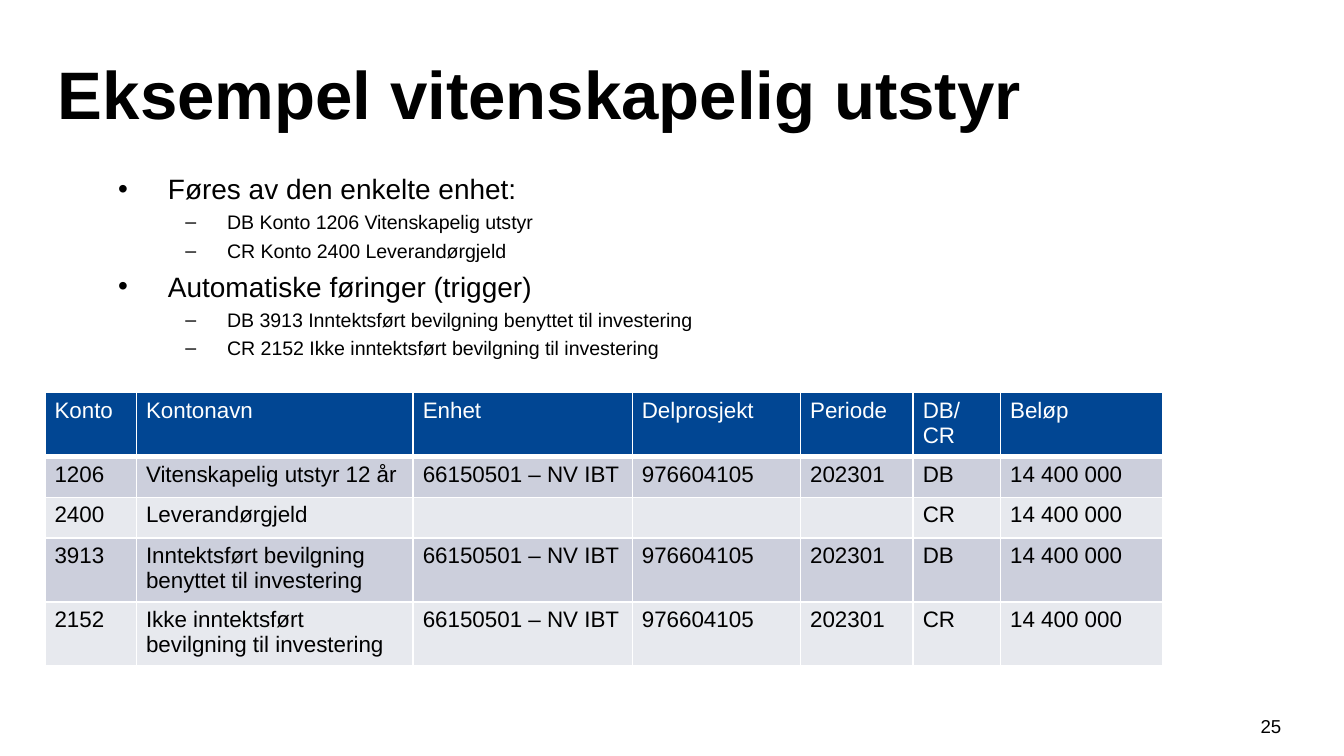
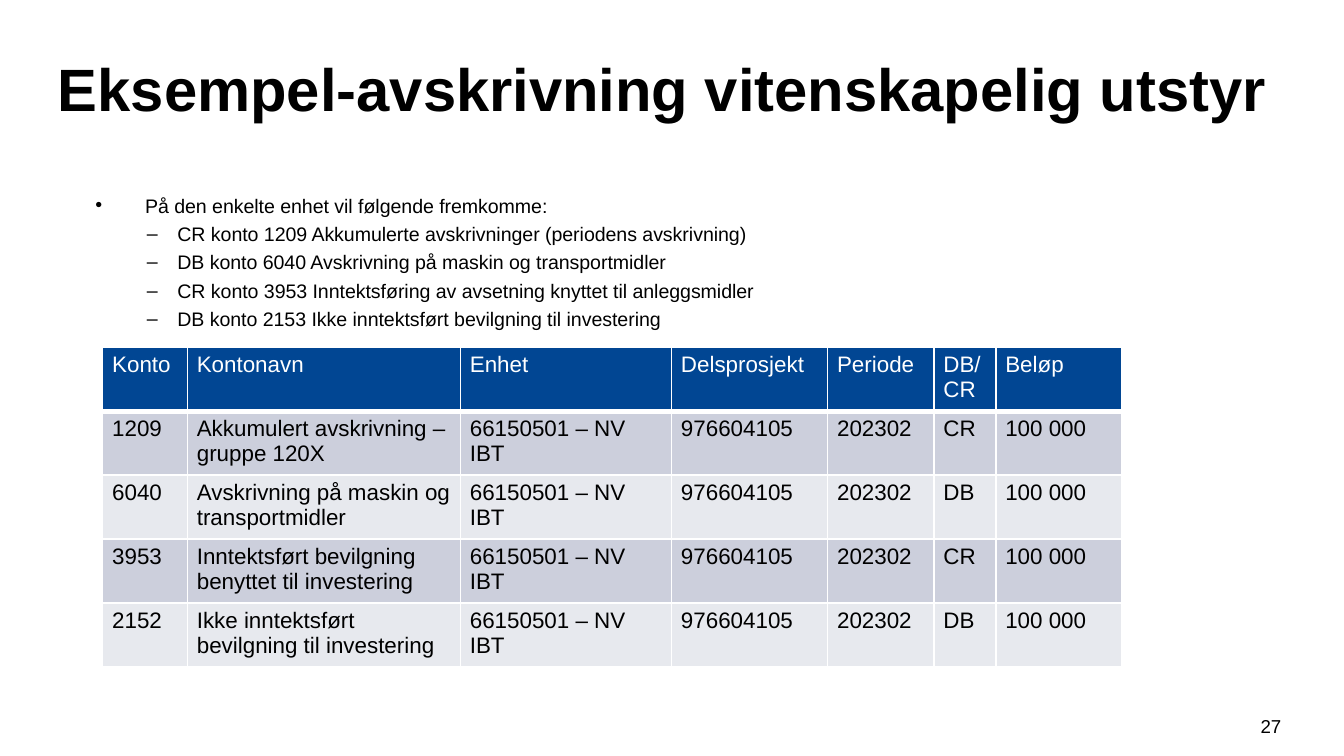
from dataclasses import dataclass

from lxml.etree import SubElement
from pptx import Presentation
from pptx.dml.color import RGBColor
from pptx.enum.text import MSO_ANCHOR, MSO_AUTO_SIZE, PP_ALIGN
from pptx.oxml.ns import qn
from pptx.util import Cm, Pt


@dataclass(frozen=True)
class Theme:
    font: str = "Arial"
    text: RGBColor = RGBColor(0x00, 0x00, 0x00)
    white: RGBColor = RGBColor(0xFF, 0xFF, 0xFF)
    header: RGBColor = RGBColor(0x01, 0x46, 0x93)
    bands: tuple = (RGBColor(0xCC, 0xCF, 0xDC), RGBColor(0xE7, 0xE9, 0xEE))
    heading_size: float = 15
    detail_size: float = 10.5
    table_size: float = 12
    number_size: float = 10
    spacing: float = 0.25  # space before a list item, per point of type
    border: float = 1
    header_border: float = 3


THEME = Theme()
TALL_ROW, LOW_ROW = 1.21, 0.77
UNIT = "66150501 – NV IBT"
PROJECT = "976604105"


def place(shape, left, top, width, height):
    shape.left, shape.top = Cm(left), Cm(top)
    shape.width, shape.height = Cm(width), Cm(height)


def add_run(paragraph, text, size, color=THEME.text, bold=False):
    run = paragraph.add_run()
    run.text = text
    run.font.name = THEME.font
    run.font.size = Pt(size)
    run.font.bold = bold
    run.font.color.rgb = color


def add_title(slide, text, size, height):
    title = slide.shapes.title
    place(title, 0.84, 0.84, 23.39, height)
    frame = title.text_frame
    frame.auto_size = MSO_AUTO_SIZE.SHAPE_TO_FIT_TEXT
    frame.vertical_anchor = MSO_ANCHOR.BOTTOM
    paragraph = frame.paragraphs[0]
    paragraph.alignment = PP_ALIGN.LEFT
    add_run(paragraph, text, size, bold=True)


def set_bullet(paragraph, character, margin, hanging):
    properties = paragraph._p.get_or_add_pPr()
    properties.set("marL", str(Cm(margin)))
    properties.set("indent", str(-Cm(hanging)))
    SubElement(properties, qn("a:buChar")).set("char", character)


def add_list(slide, left, top, items, heading_size, detail_indent):
    """Fill the body placeholder; items are (level, text) pairs."""
    body = slide.placeholders[1]
    place(body, left, top, 21.89, 9.07)
    frame = body.text_frame
    frame.auto_size = MSO_AUTO_SIZE.NONE
    styles = (
        ("•", (0.94, 0.94), heading_size),
        ("–", detail_indent, THEME.detail_size),
    )
    for index, (level, text) in enumerate(items):
        paragraph = frame.add_paragraph() if index else frame.paragraphs[0]
        character, indent, size = styles[level]
        paragraph.level = level
        set_bullet(paragraph, character, *indent)
        paragraph.space_before = Pt(round(size * THEME.spacing, 1) if index else 0)
        add_run(paragraph, text, size)


def set_borders(cell, bottom):
    properties = cell._tc.get_or_add_tcPr()
    widths = {"L": THEME.border, "R": THEME.border, "T": THEME.border, "B": bottom}
    for side, width in widths.items():
        line = SubElement(properties, qn(f"a:ln{side}"), w=str(Pt(width)))
        fill = SubElement(line, qn("a:solidFill"))
        SubElement(fill, qn("a:srgbClr"), val=str(THEME.white))


def fill_cell(cell, text, row_index):
    is_header = row_index == 0
    cell.margin_left = cell.margin_right = Cm(0.18)
    cell.margin_top = cell.margin_bottom = Cm(0.1)
    set_borders(cell, THEME.header_border if is_header else THEME.border)
    cell.fill.solid()
    cell.fill.fore_color.rgb = THEME.header if is_header else THEME.bands[(row_index - 1) % 2]
    paragraph = cell.text_frame.paragraphs[0]
    if text:
        add_run(paragraph, text, THEME.table_size, THEME.white if is_header else THEME.text)
    else:
        end = SubElement(paragraph._p, qn("a:endParaRPr"))
        end.set("sz", str(THEME.table_size * 100))


def add_posting_table(slide, left, top, widths, heights, rows):
    frame = slide.shapes.add_table(
        len(rows), len(widths), Cm(left), Cm(top), Cm(sum(widths)), Cm(sum(heights))
    )
    table = frame.table
    for column, width in zip(table.columns, widths):
        column.width = Cm(width)
    for row_index, (row, height) in enumerate(zip(rows, heights)):
        table.rows[row_index].height = Cm(height)
        for column_index, text in enumerate(row):
            fill_cell(table.cell(row_index, column_index), text, row_index)


def add_slide_number(slide, number):
    box = slide.shapes.add_textbox(Cm(23.55), Cm(13.39), Cm(0.94), Cm(0.76))
    frame = box.text_frame
    frame.word_wrap = True
    frame.margin_left = frame.margin_right = 0
    paragraph = frame.paragraphs[0]
    paragraph.alignment = PP_ALIGN.CENTER
    add_run(paragraph, str(number), THEME.number_size)


def header_row(project_label):
    return ("Konto", "Kontonavn", "Enhet", project_label, "Periode", "DB/CR", "Beløp")


def posting(account, name, side, period, amount):
    return (account, name, UNIT, PROJECT, period, side, amount)


def build_purchase_slide(slide):
    add_title(slide, "Eksempel vitenskapelig utstyr", 36, 1.8)
    items = (
        (0, "Føres av den enkelte enhet:"),
        (1, "DB Konto 1206 Vitenskapelig utstyr"),
        (1, "CR Konto 2400 Leverandørgjeld"),
        (0, "Automatiske føringer (trigger)"),
        (1, "DB 3913 Inntektsført bevilgning benyttet til investering"),
        (1, "CR 2152 Ikke inntektsført bevilgning til investering"),
    )
    add_list(slide, 1.98, 3.12, items, THEME.heading_size, (2.06, 0.79))
    period, amount = "202301", "14 400 000"
    rows = (
        header_row("Delprosjekt"),
        posting("1206", "Vitenskapelig utstyr 12 år", "DB", period, amount),
        ("2400", "Leverandørgjeld", "", "", "", "CR", amount),
        posting("3913", "Inntektsført bevilgning benyttet til investering", "DB", period, amount),
        posting("2152", "Ikke inntektsført bevilgning til investering", "CR", period, amount),
    )
    widths = (1.73, 5.23, 4.14, 3.18, 2.13, 1.65, 3.07)
    heights = (TALL_ROW, LOW_ROW, LOW_ROW, TALL_ROW, TALL_ROW)
    add_posting_table(slide, 0.85, 7.42, widths, heights, rows)
    add_slide_number(slide, 25)


def build_depreciation_slide(slide):
    add_title(slide, "Eksempel-avskrivning vitenskapelig utstyr", 32, 1.63)
    items = (
        (0, "På den enkelte enhet vil følgende fremkomme:"),
        (1, "CR konto 1209 Akkumulerte avskrivninger (periodens avskrivning)"),
        (1, "DB konto 6040 Avskrivning på maskin og transportmidler"),
        (1, "CR konto 3953 Inntektsføring av avsetning knyttet til anleggsmidler"),
        (1, "DB konto 2153 Ikke inntektsført bevilgning til investering"),
    )
    add_list(slide, 1.55, 3.53, items, THEME.detail_size, (1.55, 0.58))
    accounts = (
        ("1209", "Akkumulert avskrivning – gruppe 120X", "CR"),
        ("6040", "Avskrivning på maskin og transportmidler", "DB"),
        ("3953", "Inntektsført bevilgning benyttet til investering", "CR"),
        ("2152", "Ikke inntektsført bevilgning til investering", "DB"),
    )
    rows = [header_row("Delsprosjekt")]
    rows += [posting(*account, "202302", "100 000") for account in accounts]
    widths = (1.6, 5.16, 3.99, 2.95, 2.01, 1.17, 2.39)
    add_posting_table(slide, 1.94, 6.56, widths, [TALL_ROW] * len(rows), rows)
    add_slide_number(slide, 27)


def main():
    presentation = Presentation()
    presentation.slide_width, presentation.slide_height = Cm(25.4), Cm(14.29)
    layout = presentation.slide_layouts[1]
    for build in (build_purchase_slide, build_depreciation_slide):
        build(presentation.slides.add_slide(layout))
    presentation.save("out.pptx")


if __name__ == "__main__":
    main()
